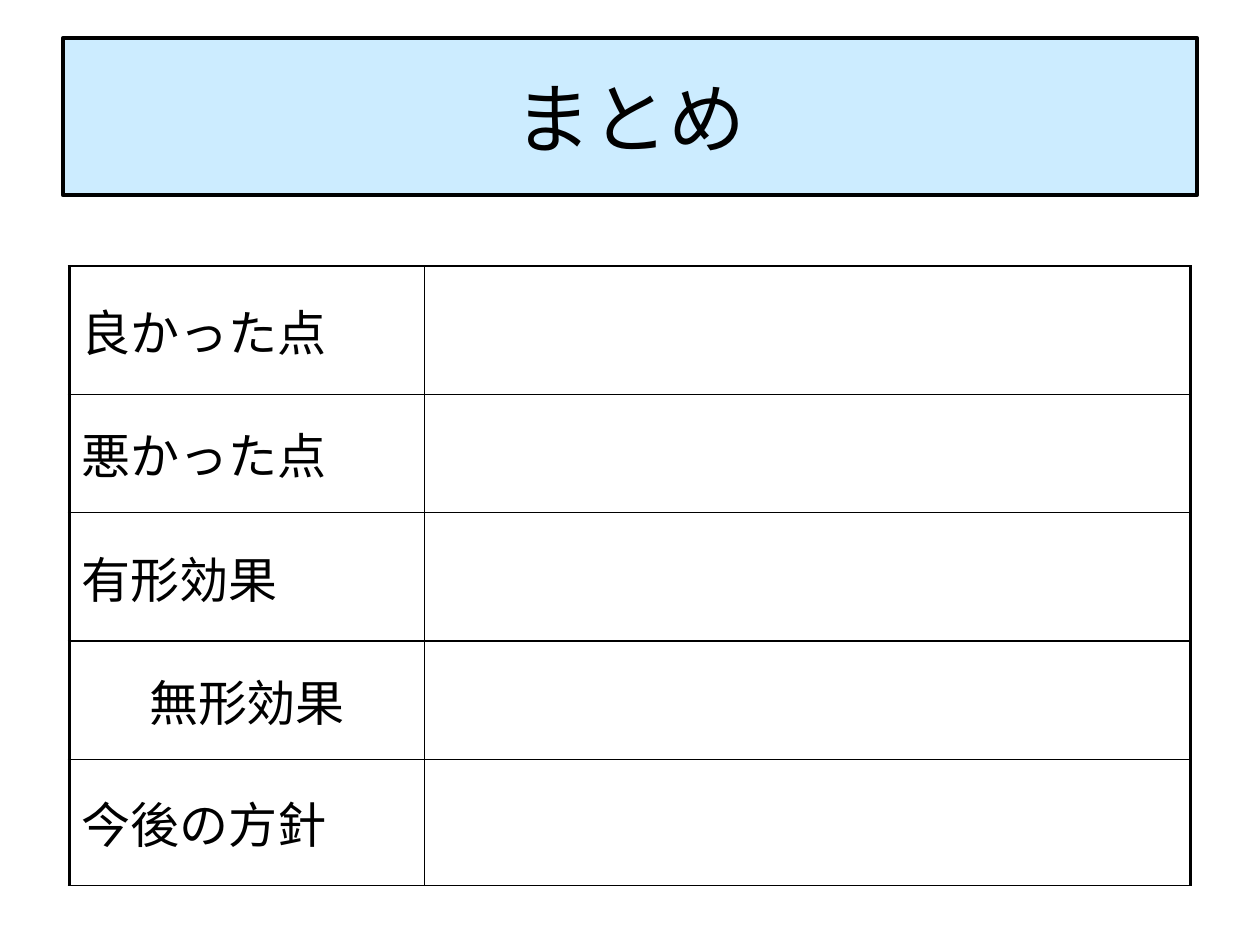
"""Build a summary slide with a title banner and a table of review points."""
from lxml import etree
from pptx import Presentation, util as u
from pptx.dml.color import RGBColor
from pptx.enum import text as t
from pptx.oxml.ns import qn

FONT = "Noto Sans CJK JP"
BLACK = "000000"
THIN, THICK = 1, 2.25
COLUMNS = (2.82, 6.08)
ROWS = (
    ("良かった点", 1.02, t.PP_ALIGN.LEFT),
    ("悪かった点", 0.94, t.PP_ALIGN.LEFT),
    ("有形効果", 1.02, t.PP_ALIGN.LEFT),
    ("無形効果", 0.94, t.PP_ALIGN.CENTER),
    ("今後の方針", 1, t.PP_ALIGN.LEFT),
)


def color(code):
    """Return the colour for a hex string."""
    return RGBColor.from_string(code)


def write(frame, words, size, align=t.PP_ALIGN.LEFT):
    """Write one formatted paragraph in a text frame."""
    para = frame.paragraphs[0]
    para.alignment = align
    span = para.add_run()
    span.text = words
    span.font.size = u.Pt(size)
    span.font.name = FONT
    span.font.color.rgb = color(BLACK)
    latin = span.font._element.find(qn("a:latin"))
    east = etree.Element(qn("a:ea"), typeface=FONT)
    latin.addnext(east)


def set_borders(cell, **widths):
    """Draw black cell borders with the given widths in points."""
    props = cell._tc.get_or_add_tcPr()
    for place, side in enumerate("LRTB"):
        line = etree.Element(qn(f"a:ln{side}"), w=str(u.Pt(widths.get(side, THIN))))
        fill = etree.SubElement(line, qn("a:solidFill"))
        etree.SubElement(fill, qn("a:srgbClr"), val=BLACK)
        props.insert(place, line)


def add_banner(page, words):
    """Format the title placeholder as a framed banner."""
    box = page.shapes.title
    box.left, box.top = u.Inches(0.5), u.Inches(0.3)
    box.width, box.height = u.Inches(9), u.Inches(1.25)
    box.fill.solid()
    box.fill.fore_color.rgb = color("CCECFF")
    box.line.color.rgb = color(BLACK)
    box.line.width = u.Pt(THICK)
    box.text_frame.vertical_anchor = t.MSO_ANCHOR.MIDDLE
    write(box.text_frame, words, 44, t.PP_ALIGN.CENTER)


def add_review_table(page):
    """Add the table of labels with an empty column for answers."""
    height = sum(row[1] for row in ROWS)
    table = page.shapes.add_table(
        len(ROWS), len(COLUMNS), u.Inches(0.55), u.Inches(2.11),
        u.Inches(sum(COLUMNS)), u.Inches(height)).table
    table.first_row = table.horz_banding = False
    for column, width in zip(table.columns, COLUMNS):
        column.width = u.Inches(width)
    for row, (label, height, align) in zip(table.rows, ROWS):
        row.height = u.Inches(height)
        name, answer = row.cells
        for cell in (name, answer):
            cell.fill.background()
            cell.vertical_anchor = t.MSO_ANCHOR.MIDDLE
        set_borders(name, L=THICK)
        set_borders(answer, R=THICK)
        write(name.text_frame, label, 28, align)


def main():
    """Build and save the deck."""
    deck = Presentation()
    deck.slide_width, deck.slide_height = u.Inches(10), u.Inches(7.5)
    page = deck.slides.add_slide(deck.slide_layouts[5])
    add_review_table(page)
    add_banner(page, "まとめ")
    deck.save("out.pptx")


if __name__ == "__main__":
    main()
